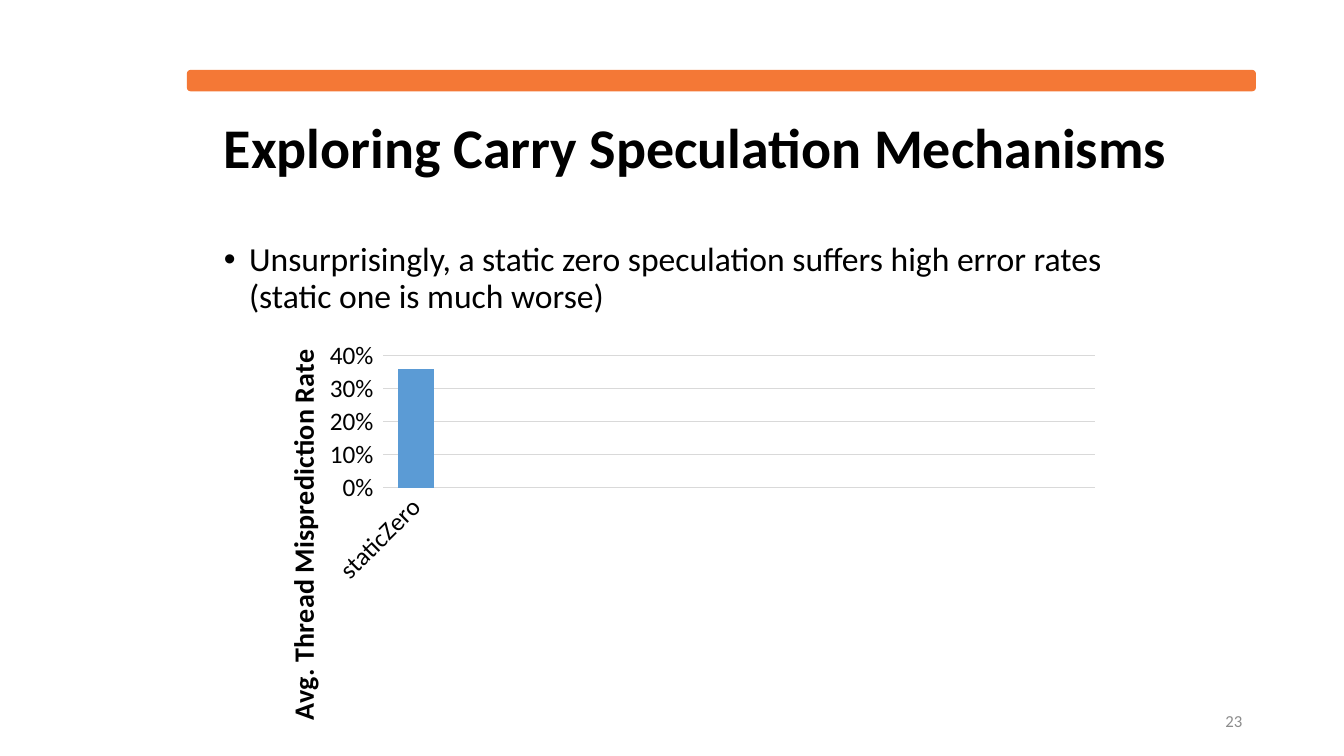
import pptx
import pptx.chart.data
import pptx.dml.color
import pptx.enum.chart
import pptx.enum.shapes
import pptx.enum.text
import pptx.oxml
import pptx.oxml.ns
import pptx.util
from pptx.util import Inches

RGBColor = pptx.dml.color.RGBColor
PP_ALIGN = pptx.enum.text.PP_ALIGN
MSO_ANCHOR = pptx.enum.text.MSO_ANCHOR

BLACK = RGBColor(0x00, 0x00, 0x00)
ORANGE = RGBColor(0xF4, 0x78, 0x36)
BLUE = RGBColor(0x5B, 0x9B, 0xD5)
GRID_GRAY = RGBColor(0xD9, 0xD9, 0xD9)
NUMBER_GRAY = RGBColor(0x8C, 0x8C, 0x8C)
FONT = "Calibri"
MECHANISM_SLOTS = 11


def set_font(font, size, color=BLACK, bold=False):
    font.name = FONT
    font.size = pptx.util.Pt(size)
    font.bold = bold
    font.color.rgb = color


def place(sp, left, top, width, height):
    sp.left, sp.top = Inches(left), Inches(top)
    sp.width, sp.height = Inches(width), Inches(height)


def write_text(sp, text, size, color=BLACK, bold=False, align=PP_ALIGN.LEFT,
               anchor=MSO_ANCHOR.MIDDLE, spacing=1.0):
    tf = sp.text_frame
    tf.word_wrap = True
    tf.auto_size = pptx.enum.text.MSO_AUTO_SIZE.NONE
    tf.vertical_anchor = anchor
    p = tf.paragraphs[0]
    p.alignment = align
    p.line_spacing = spacing
    p.space_before = pptx.util.Pt(0)
    r = p.add_run()
    r.text = text
    set_font(r.font, size, color, bold)
    return p


def add_bullet(p, indent):
    pPr = p._p.get_or_add_pPr()
    pPr.set("marL", str(Inches(indent)))
    pPr.set("indent", str(-Inches(indent)))
    ns = pptx.oxml.ns.nsdecls("a")
    pPr.append(pptx.oxml.parse_xml(f'<a:buFont {ns} typeface="Arial"/>'))
    pPr.append(pptx.oxml.parse_xml(f'<a:buChar {ns} char="•"/>'))


def add_bar(s):
    sp = s.shapes.add_shape(
        pptx.enum.shapes.MSO_SHAPE.ROUNDED_RECTANGLE,
        Inches(1.86), Inches(0.7), Inches(10.59), Inches(0.2))
    sp.shadow.inherit = False
    sp.fill.solid()
    sp.fill.fore_color.rgb = ORANGE
    sp.line.color.rgb = ORANGE
    sp.line.width = pptx.util.Pt(1)


def make_layout(x, y, w=None, h=None):
    target = '<c:layoutTarget val="inner"/>' if w else ""
    modes = '<c:xMode val="edge"/><c:yMode val="edge"/>'
    values = zip("xywh", (x, y, w, h))
    sizes = "".join(f'<c:{k} val="{v}"/>' for k, v in values if v is not None)
    return pptx.oxml.parse_xml(
        f'<c:layout {pptx.oxml.ns.nsdecls("c")}><c:manualLayout>'
        f"{target}{modes}{sizes}</c:manualLayout></c:layout>")


def set_layout(parent, layout, after=None):
    for old in parent.findall(pptx.oxml.ns.qn("c:layout")):
        parent.remove(old)
    if after is None:
        parent.insert(0, layout)
    else:
        after.addnext(layout)


def style_line(line):
    line.color.rgb = GRID_GRAY
    line.width = pptx.util.Pt(0.75)


def format_category_axis(axis):
    axis.major_tick_mark = pptx.enum.chart.XL_TICK_MARK.NONE
    set_font(axis.tick_labels.font, 18)
    style_line(axis.format.line)
    body = axis._element.find(pptx.oxml.ns.qn("c:txPr")).bodyPr
    body.set("rot", "-2700000")
    body.set("vert", "horz")


def format_value_axis(axis):
    axis.minimum_scale, axis.maximum_scale, axis.major_unit = 0, 0.4, 0.1
    axis.tick_labels.number_format = "0%"
    axis.tick_labels.number_format_is_linked = False
    set_font(axis.tick_labels.font, 18)
    axis.format.line.fill.background()
    style_line(axis.major_gridlines.format.line)
    tf = axis.axis_title.text_frame
    r = tf.paragraphs[0].add_run()
    r.text = "Avg. Thread Misprediction Rate"
    set_font(r.font, 20, bold=True)
    body = tf._txBody.bodyPr
    body.set("rot", "-5400000")
    body.set("vert", "horz")
    title = axis.axis_title._element
    set_layout(title, make_layout(0.02, 0.02),
               title.find(pptx.oxml.ns.qn("c:tx")))


def add_rate_chart(s):
    data = pptx.chart.data.CategoryChartData(number_format="0%")
    data.categories = ["staticZero"] + [""] * (MECHANISM_SLOTS - 1)
    data.add_series("Series 1", [0.36] + [None] * (MECHANISM_SLOTS - 1))
    chart = s.shapes.add_chart(
        pptx.enum.chart.XL_CHART_TYPE.COLUMN_CLUSTERED,
        Inches(2.59), Inches(3.3), Inches(8.42), Inches(5.7), data).chart
    chart.has_legend = False
    chart.has_title = False
    set_font(chart.font, 18)
    plot = chart.plots[0]
    plot.gap_width = 80
    plot.vary_by_categories = False
    fill = plot.series[0].format.fill
    fill.solid()
    fill.fore_color.rgb = BLUE
    format_category_axis(chart.category_axis)
    format_value_axis(chart.value_axis)
    set_layout(chart._chartSpace.chart.plotArea,
               make_layout(0.144, 0.04, 0.838, 0.23))


def main():
    prs = pptx.Presentation()
    prs.slide_width, prs.slide_height = Inches(13.33), Inches(7.5)
    s = prs.slides.add_slide(prs.slide_layouts[1])
    add_bar(s)

    title, body = s.shapes.title, s.placeholders[1]
    place(title, 2.12, 1.04, 10.41, 0.91)
    write_text(title, "Exploring Carry Speculation Mechanisms", 40,
               bold=True, spacing=0.9)
    place(body, 2.12, 2.36, 9.36, 1.39)
    p = write_text(body, "Unsurprisingly, a static zero speculation suffers "
                   "high error rates (static one is much worse)", 24,
                   anchor=MSO_ANCHOR.TOP, spacing=0.9)
    add_bullet(p, 0.25)

    add_rate_chart(s)
    number = s.shapes.add_textbox(
        Inches(9.42), Inches(6.95), Inches(3), Inches(0.4))
    write_text(number, "23", 12, NUMBER_GRAY, align=PP_ALIGN.RIGHT)
    prs.save("out.pptx")


if __name__ == "__main__":
    main()
